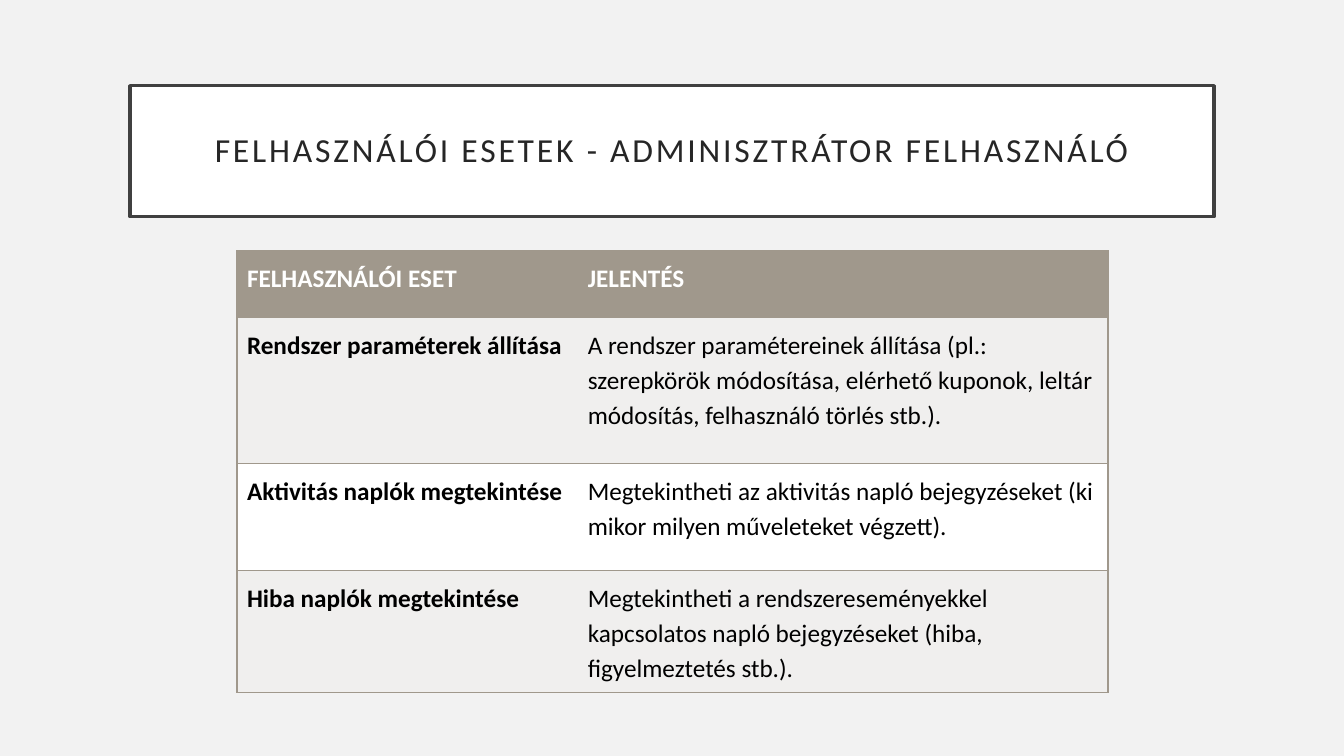
from lxml.etree import SubElement
from pptx import Presentation
from pptx.dml.color import RGBColor
from pptx.enum.text import MSO_ANCHOR, MSO_AUTO_SIZE, PP_ALIGN
from pptx.oxml.ns import qn
from pptx.util import Inches, Pt

BACKGROUND = RGBColor(0xF2, 0xF2, 0xF2)
WHITE = RGBColor(0xFF, 0xFF, 0xFF)
BLACK = RGBColor(0x00, 0x00, 0x00)
FRAME = RGBColor(0x40, 0x40, 0x40)
TITLE_INK = RGBColor(0x26, 0x26, 0x26)
TAUPE = RGBColor(0xA0, 0x98, 0x8C)
BAND = RGBColor(0xF0, 0xEF, 0xEE)
FONT = "Calibri"

TITLE = "FELHASZNÁLÓI ESETEK - ADMINISZTRÁTOR FELHASZNÁLÓ"
USE_CASES = [
    ("FELHASZNÁLÓI ESET", "JELENTÉS"),
    ("Rendszer paraméterek állítása",
     "A rendszer paramétereinek állítása (pl.: szerepkörök módosítása, "
     "elérhető kuponok, leltár módosítás, felhasználó törlés stb.)."),
    ("Aktivitás naplók megtekintése",
     "Megtekintheti az aktivitás napló bejegyzéseket "
     "(ki mikor milyen műveleteket végzett)."),
    ("Hiba naplók megtekintése",
     "Megtekintheti a rendszereseményekkel kapcsolatos napló bejegyzéseket "
     "(hiba, figyelmeztetés stb.)."),
]
COLUMN_WIDTHS = [3.38, 5.26]
ROW_HEIGHTS = [0.66, 1.45, 1.06, 1.21]


def add_run(paragraph, text, size, color, bold=False):
    run = paragraph.add_run()
    run.text = text
    run.font.name = FONT
    run.font.size = Pt(size)
    run.font.bold = bold
    run.font.color.rgb = color
    return run


def set_title(slide):
    title = slide.shapes.title
    title.left, title.top = Inches(1.29), Inches(0.85)
    title.width, title.height = Inches(10.75), Inches(1.3)
    title.fill.solid()
    title.fill.fore_color.rgb = WHITE
    title.line.color.rgb = FRAME
    title.line.width = Pt(2.5)
    frame = title.text_frame
    frame.word_wrap = True
    frame.auto_size = MSO_AUTO_SIZE.NONE
    frame.vertical_anchor = MSO_ANCHOR.MIDDLE
    frame.margin_left = frame.margin_right = Inches(0.2)
    frame.margin_top = frame.margin_bottom = Inches(0.2)
    heading = frame.paragraphs[0]
    heading.alignment = PP_ALIGN.CENTER
    heading.line_spacing = 0.9
    run = add_run(heading, TITLE, 24, TITLE_INK)
    run.font._element.set("spc", "200")


def add_borders(cell, sides):
    properties = cell._tc.get_or_add_tcPr()
    for side in ("L", "R", "T", "B"):
        border = SubElement(properties, qn(f"a:ln{side}"), w=str(Pt(1)))
        if side in sides:
            fill = SubElement(border, qn("a:solidFill"))
            SubElement(fill, qn("a:srgbClr"), val=str(TAUPE))
        else:
            SubElement(border, qn("a:noFill"))


def fill_cell(cell, text, fill, ink, bold, sides):
    add_borders(cell, sides)
    cell.fill.solid()
    cell.fill.fore_color.rgb = fill
    cell.margin_left = cell.margin_right = Inches(0.1)
    cell.margin_top = cell.margin_bottom = Inches(0.08)
    paragraph = cell.text_frame.paragraphs[0]
    paragraph.line_spacing = 1.15
    add_run(paragraph, text, 18, ink, bold)


def add_use_case_table(slide):
    table = slide.shapes.add_table(
        len(USE_CASES), len(COLUMN_WIDTHS), Inches(2.35), Inches(2.49),
        Inches(sum(COLUMN_WIDTHS)), Inches(sum(ROW_HEIGHTS))).table
    for column, width in zip(table.columns, COLUMN_WIDTHS):
        column.width = Inches(width)
    for r, (use_case, height) in enumerate(zip(USE_CASES, ROW_HEIGHTS)):
        table.rows[r].height = Inches(height)
        header = r == 0
        fill = TAUPE if header else BAND if r % 2 else WHITE
        ink = WHITE if header else BLACK
        for c, (text, sides) in enumerate(zip(use_case, ("LTB", "RTB"))):
            fill_cell(table.cell(r, c), text, fill, ink, header or c == 0, sides)


def main():
    presentation = Presentation()
    presentation.slide_width = Inches(13.33)
    presentation.slide_height = Inches(7.5)
    slide = presentation.slides.add_slide(presentation.slide_layouts[5])
    slide.background.fill.solid()
    slide.background.fill.fore_color.rgb = BACKGROUND
    set_title(slide)
    add_use_case_table(slide)
    presentation.save("out.pptx")


if __name__ == "__main__":
    main()
